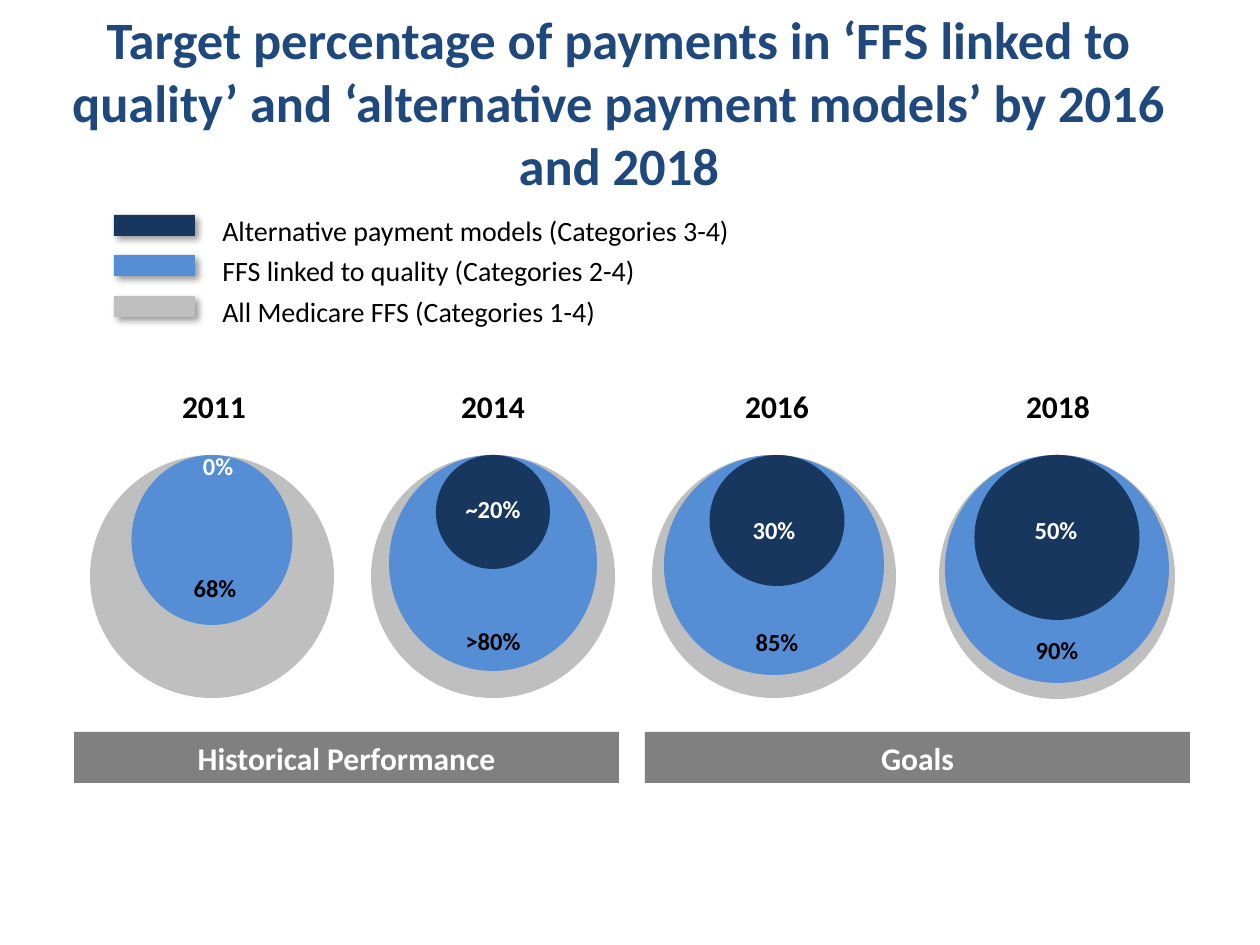
from lxml import etree
from pptx import Presentation
from pptx.dml.color import RGBColor
from pptx.enum.shapes import MSO_SHAPE
from pptx.enum.text import MSO_ANCHOR, MSO_AUTO_SIZE, PP_ALIGN
from pptx.oxml.ns import qn
from pptx.util import Pt

OVAL, RECTANGLE = MSO_SHAPE.OVAL, MSO_SHAPE.RECTANGLE
CENTER, LEFT = PP_ALIGN.CENTER, PP_ALIGN.LEFT
MIDDLE = MSO_ANCHOR.MIDDLE
NO_FIT = MSO_AUTO_SIZE.NONE

# Content
TITLE = ("Target percentage of payments in ‘FFS linked to quality’ and "
         "‘alternative payment models’ by 2016 and 2018")
NAVY, BLUE, GRAY = "17375E", "558ED5", "BFBFBF"
BLACK, WHITE = "000000", "FFFFFF"
LEGEND = [  # label, colour, swatch top
    ("Alternative payment models (Categories 3-4)", NAVY, 215),
    ("FFS linked to quality (Categories 2-4)", BLUE, 255),
    ("All Medicare FFS (Categories 1-4)", GRAY, 296),
]
# Circles: centre x, width, height, colour. Shares: text, centre x, centre y, colour.
YEARS = [
    {"year": "2011", "center": 214,
     "circles": [(212, 244, 243, GRAY), (212, 161, 170, BLUE)],
     "shares": [("0%", 218, 466, WHITE), ("68%", 215, 588, BLACK)]},
    {"year": "2014", "center": 493,
     "circles": [(493, 244, 243, GRAY), (493, 208, 216, BLUE), (493, 114, 114, NAVY)],
     "shares": [("~20%", 493, 509, WHITE), (">80%", 493, 641, BLACK)]},
    {"year": "2016", "center": 777,
     "circles": [(774, 244, 243, GRAY), (774, 220, 220, BLUE), (777, 135, 131, NAVY)],
     "shares": [("30%", 774, 530, WHITE), ("85%", 777, 642, BLACK)]},
    {"year": "2018", "center": 1058,
     "circles": [(1057, 236, 244, GRAY), (1057, 224, 228, BLUE), (1057, 165, 165, NAVY)],
     "shares": [("50%", 1056, 530, WHITE), ("90%", 1057, 650, BLACK)]},
]
PERIODS = [("Historical Performance", 74), ("Goals", 645)]

CIRCLE_TOP = 455
YEAR_TOP, YEAR_W, YEAR_H = 381, 262, 50
SHARE_W, SHARE_H = 94, 43
PERIOD_TOP, PERIOD_W, PERIOD_H = 732, 545, 51
SWATCH_LEFT, SWATCH_W, SWATCH_H = 114, 81, 21
LABEL_LEFT, LABEL_W, LABEL_H, LABEL_RISE = 210, 634, 47, 8


def px(length):
    return int(length * 914400 / 126)


def rgb(color):
    return RGBColor.from_string(color)


def write(shape, words, size, color, bold=True, align=CENTER):
    frame = shape.text_frame
    frame.word_wrap = True
    frame.auto_size = NO_FIT
    paragraph = frame.paragraphs[0]
    paragraph.alignment = align
    run = paragraph.add_run()
    run.text = words
    for key, value in {"name": "Calibri", "size": Pt(size), "bold": bold}.items():
        setattr(run.font, key, value)
    run.font.color.rgb = rgb(color)


def add_text(left, top, width, height, words, size, color, **style):
    box = slide.shapes.add_textbox(px(left), px(top), px(width), px(height))
    write(box, words, size, color, **style)


def add_block(kind, left, top, width, height, color):
    block = slide.shapes.add_shape(kind, px(left), px(top), px(width), px(height))
    block.shadow.inherit = False
    block.fill.solid()
    block.fill.fore_color.rgb = rgb(color)
    block.line.fill.background()
    return block


def add_shadow(block):
    effects = block.fill._xPr.find(qn("a:effectLst"))
    shadow = etree.SubElement(effects, qn("a:outerShdw"), blurRad=str(Pt(4)),
                              dist=str(Pt(3)), dir="2700000", rotWithShape="0")
    color = etree.SubElement(shadow, qn("a:srgbClr"), val=BLACK)
    etree.SubElement(color, qn("a:alpha"), val="40000")


deck = Presentation()
deck.slide_width, deck.slide_height = px(1260), px(945)
slide = deck.slides.add_slide(deck.slide_layouts[5])

# Title
title = slide.shapes.title
place = {"left": 13, "top": 63, "width": 1212, "height": 77}
for side, length in place.items():
    setattr(title, side, px(length))
write(title, TITLE, 30, "1F497D")
title.text_frame.vertical_anchor = MIDDLE

# Legend
for label, color, top in LEGEND:
    add_shadow(add_block(RECTANGLE, SWATCH_LEFT, top, SWATCH_W, SWATCH_H, color))
    add_text(LABEL_LEFT, top - LABEL_RISE, LABEL_W, LABEL_H, label, 16, BLACK,
             bold=False, align=LEFT)

# Nested circles, hung from a common top, with their shares
for column in YEARS:
    add_text(column["center"] - YEAR_W / 2, YEAR_TOP, YEAR_W, YEAR_H,
             column["year"], 18, BLACK)
    for center, width, height, color in column["circles"]:
        add_block(OVAL, center - width / 2, CIRCLE_TOP, width, height, color)
    for share, x, y, color in column["shares"]:
        add_text(x - SHARE_W / 2, y - SHARE_H / 2, SHARE_W, SHARE_H, share, 14, color)

# Period bars
for period, left in PERIODS:
    bar = add_block(RECTANGLE, left, PERIOD_TOP, PERIOD_W, PERIOD_H, "808080")
    write(bar, period, 18, WHITE)
    bar.text_frame.vertical_anchor = MIDDLE

deck.save("out.pptx")
